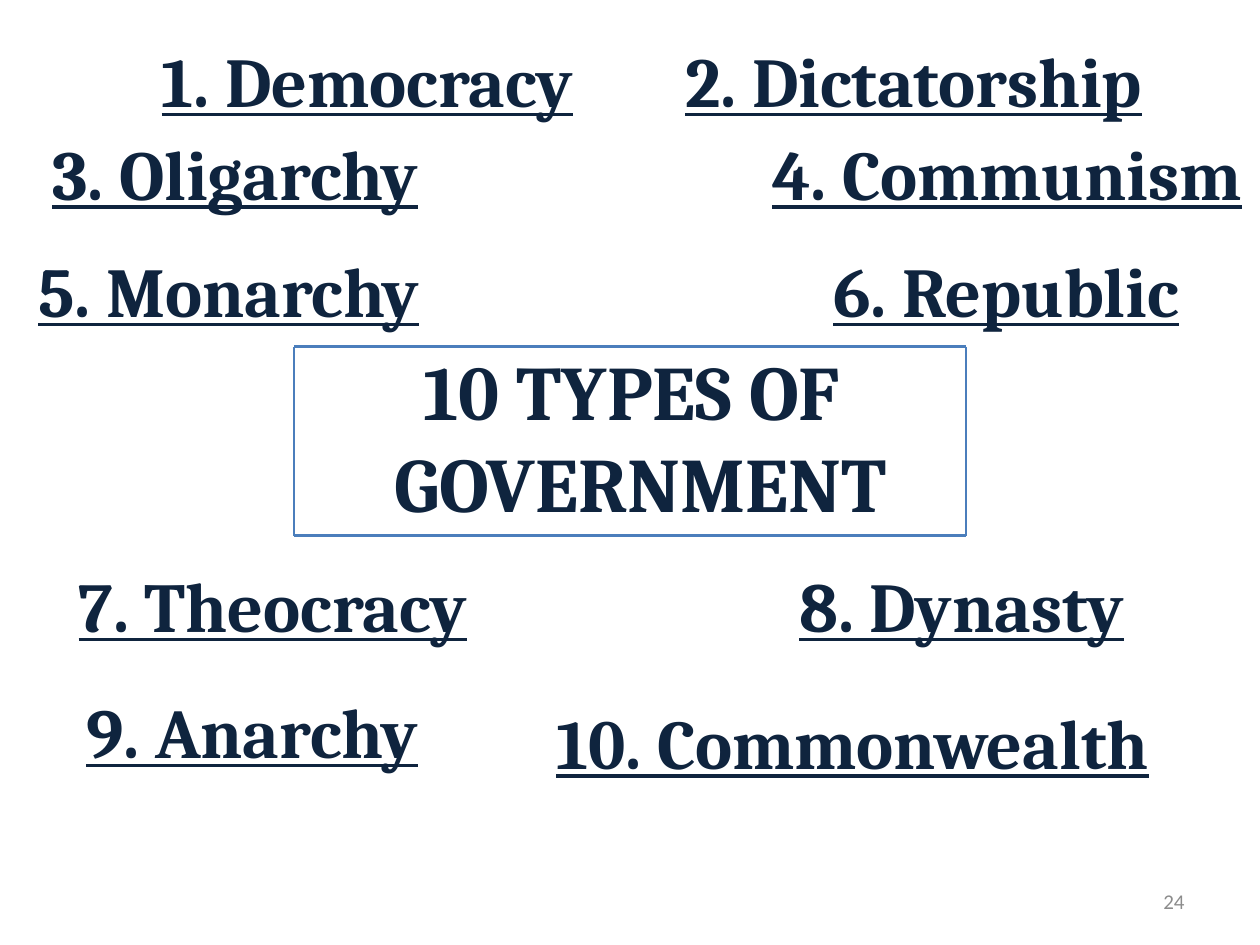
from dataclasses import dataclass
from lxml import etree
from pptx import Presentation, util as u
from pptx.dml.color import RGBColor
from pptx.enum import shapes, text
from pptx.oxml.ns import qn


@dataclass(frozen=True)
class Theme:
    navy: str = "0F243E"
    blue: str = "4B7EBC"
    grey: str = "8C8C8C"
    heading_font: str = "Cambria"
    number_font: str = "Calibri"
    title_size: int = 44
    label_size: int = 40
    number_size: int = 12
    side_rule: float = 1.25
    top_rule: float = 1.5


THEME = Theme()
COLUMNS, ROWS = 120, 90
WIDTH, HEIGHT = u.Inches(10), u.Inches(7.5)
LABEL_ROWS = 9.24

GOVERNMENTS = [
    ("1. Democracy", 12, 3, 46),
    ("2. Dictatorship", 61, 3, 52),
    ("3. Oligarchy", -1.1, 11.8, 47),
    ("4. Communism", 71.4, 11.8, 49),
    ("5. Monarchy", -1.7, 23, 47),
    ("6. Republic", 74.3, 23, 43),
    ("7. Theocracy", 5, 53, 42),
    ("8. Dynasty", 71, 53, 41.2),
    ("9. Anarchy", 4, 65, 40),
    ("10. Commonwealth", 47, 66, 68.4),
]


def across(columns):
    return round(WIDTH * columns / COLUMNS)


def down(rows):
    return round(HEIGHT * rows / ROWS)


def add_words(slide, words, box, size, font=THEME.heading_font, color=THEME.navy,
              bold=True, underline=False, align=text.PP_ALIGN.CENTER,
              anchor=text.MSO_ANCHOR.MIDDLE, fit=text.MSO_AUTO_SIZE.NONE):
    left, top, width, height = box
    frame = slide.shapes.add_textbox(
        across(left), down(top), across(width), down(height)).text_frame
    frame.word_wrap = True
    frame.auto_size = fit
    frame.vertical_anchor = anchor
    paragraph = frame.paragraphs[0]
    paragraph.text = words
    paragraph.alignment = align
    for run in paragraph.runs:
        run.font.name = font
        run.font.size = u.Pt(size)
        run.font.bold = bold
        run.font.underline = underline
        run.font.color.rgb = RGBColor.from_string(color)


def add_rule(slide, start, end, weight):
    rule = slide.shapes.add_connector(
        shapes.MSO_CONNECTOR.STRAIGHT,
        across(start[0]), down(start[1]), across(end[0]), down(end[1]))
    rule.line.color.rgb = RGBColor.from_string(THEME.blue)
    rule.line.width = u.Pt(weight)
    etree.SubElement(rule.element.spPr, qn("a:effectLst"))


def add_title(slide, box):
    add_words(slide, "10 TYPES OF \vGOVERNMENT", box, THEME.title_size)


def add_frame(slide, box):
    left, top, width, height = box
    right, bottom = left + width, top + height
    corners = [(left, bottom), (left, top), (right, top), (right, bottom)]
    weights = [THEME.side_rule, THEME.top_rule, THEME.side_rule, THEME.side_rule]
    for start, end, weight in zip(corners, corners[1:] + corners[:1], weights):
        add_rule(slide, start, end, weight)


def add_government(slide, name, box):
    add_words(slide, name, box, THEME.label_size, underline=True,
              anchor=text.MSO_ANCHOR.TOP,
              fit=text.MSO_AUTO_SIZE.SHAPE_TO_FIT_TEXT)


def add_page_number(slide, box):
    add_words(slide, "24", box, THEME.number_size, font=THEME.number_font,
              color=THEME.grey, bold=False, align=text.PP_ALIGN.RIGHT)


def main():
    deck = Presentation()
    deck.slide_width, deck.slide_height = WIDTH, HEIGHT
    slide = deck.slides.add_slide(deck.slide_layouts[6])
    add_title(slide, (7, 34, 108, 15))
    add_page_number(slide, (86, 83.4, 28, 4.8))
    for name, left, top, width in GOVERNMENTS:
        add_government(slide, name, (left, top, width, LABEL_ROWS))
    add_frame(slide, (28, 33, 64, 18))
    deck.save("out.pptx")


if __name__ == "__main__":
    main()
